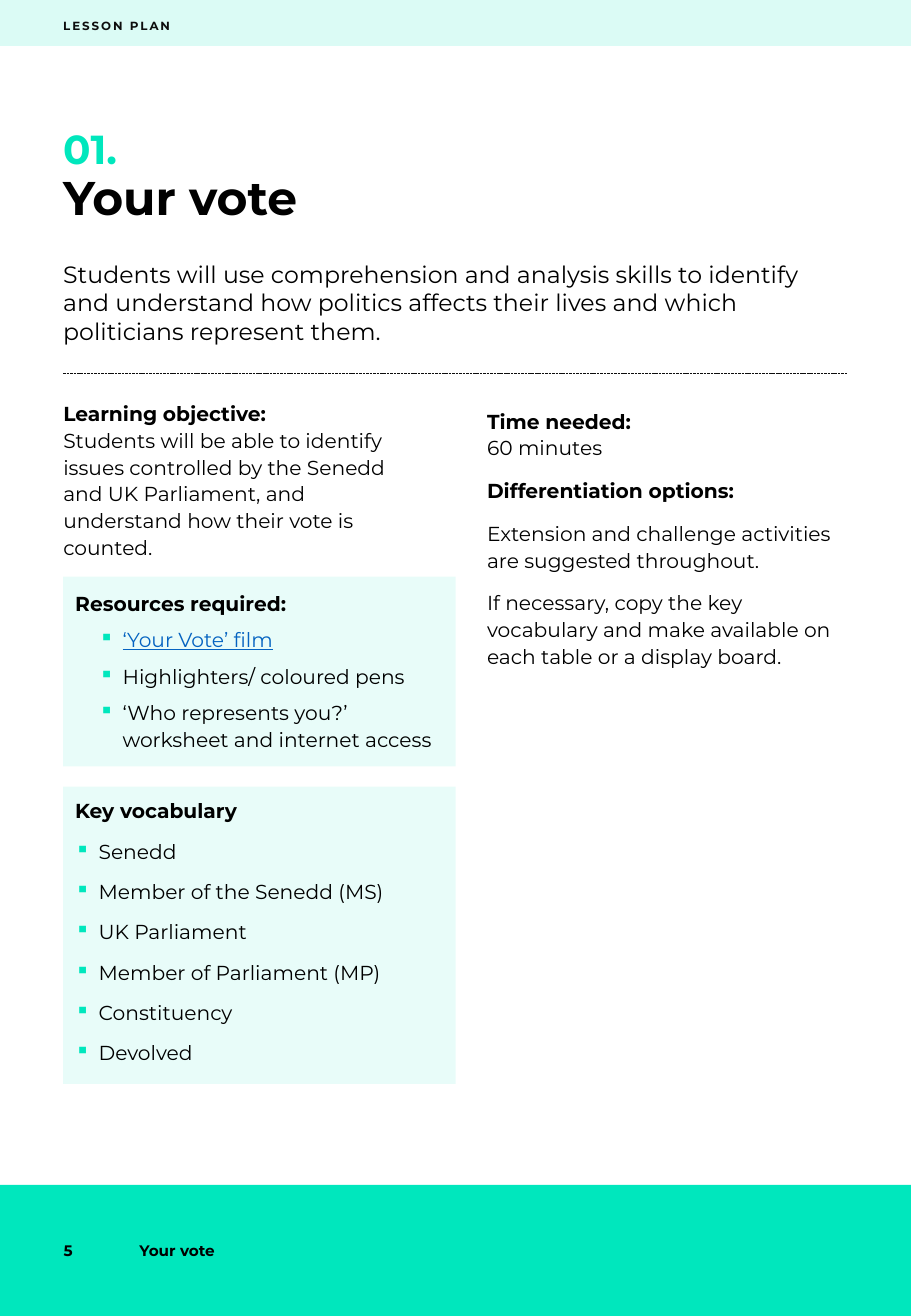
"""Build the lesson plan page for "Your vote"."""
from dataclasses import dataclass
from typing import Optional

from lxml import etree
from pptx import Presentation
from pptx.dml.color import RGBColor
from pptx.enum.dml import MSO_LINE
from pptx.enum.shapes import MSO_CONNECTOR, MSO_SHAPE
from pptx.enum.text import MSO_ANCHOR, PP_ALIGN
from pptx.oxml.ns import qn
from pptx.util import Pt

TOP, MIDDLE = MSO_ANCHOR.TOP, MSO_ANCHOR.MIDDLE
LEFT_ALIGN = PP_ALIGN.LEFT
RECTANGLE = MSO_SHAPE.RECTANGLE
STRAIGHT = MSO_CONNECTOR.STRAIGHT
SHORT_DASH = MSO_LINE.SQUARE_DOT

FONT = "Montserrat"
COLORS = {"mint": "00E7BD", "black": "000000", "ink": "0D0D0D", "link": "0563C1"}
PAGE_WIDTH, PAGE_HEIGHT = 540, 780.48
MARGIN = 37.5
FULL_WIDTH = 465
COLUMN_WIDTH = 212.4
PANEL_WIDTH = 232.6
FOOTER_TOP = 702.7
FOOTER_HEIGHT = PAGE_HEIGHT - FOOTER_TOP
BULLET_HANG = 13.9


@dataclass(frozen=True)
class Para:
    """A paragraph: an optional bold heading line, then text."""
    text: str = ""
    heading: str = ""
    size: float = 12
    color: str = "black"
    line_spacing: float = 1.0
    before: float = 7.5
    bullet_indent: Optional[float] = None
    link: bool = False
    tracking: float = 0


@dataclass(frozen=True)
class Block:
    """A text box, or a tinted panel if opacity is given."""
    left: float
    top: float
    width: float
    height: float
    paras: tuple[Para, ...]
    inset: float = 0
    anchor: MSO_ANCHOR = TOP
    opacity: Optional[int] = None


def bullets(items: tuple[str, ...], indent: float, **style) -> tuple[Para, ...]:
    """Return one bulleted paragraph per item."""
    return tuple(Para(item, bullet_indent=indent, **style) for item in items)


BLOCKS = (
    Block(MARGIN, 5, 194.4, 20.2,
          (Para(heading="LESSON PLAN", size=7, color="ink", tracking=1.2),), anchor=MIDDLE),
    Block(MARGIN, 73.4, FULL_WIDTH, 26.6, (Para(heading="01.", size=24, color="mint"),)),
    Block(MARGIN, 103.7, FULL_WIDTH, 63.4,
          (Para(heading="Your vote", size=28, line_spacing=0.9),)),
    Block(MARGIN, 154.1, FULL_WIDTH, 50.4, (Para(
        "Students will use comprehension and analysis skills to identify and understand how "
        "politics affects their lives and which politicians represent them.", size=14),)),
    Block(MARGIN, 236.9, COLUMN_WIDTH, 103, (Para(
        "Students will be able to identify issues controlled by the Senedd and UK Parliament, "
        "and understand how their vote is counted.", "Learning objective:", line_spacing=1.1),)),
    Block(288.7, 241.2, COLUMN_WIDTH, 442, (
        Para("60 minutes", "Time needed:", line_spacing=1.1),
        Para(heading="Differentiation options:", line_spacing=1.1),
        Para("Extension and challenge activities are suggested throughout.", line_spacing=1.1),
        Para("If necessary, copy the key vocabulary and make available on each table "
             "or a display board.", line_spacing=1.1))),
    Block(MARGIN, 342, PANEL_WIDTH, 112.5, (
        Para(heading="Resources required:", line_spacing=1.1),
        *bullets(("‘Your Vote’ film",), 28.1, line_spacing=1.1, before=3.8, link=True),
        *bullets(("Highlighters/ coloured pens",
                  "‘Who represents you?’ worksheet and internet access"),
                 28.1, line_spacing=1.1, before=3.8)), inset=7.2, opacity=9),
    Block(MARGIN, 466.5, PANEL_WIDTH, 176.4, (
        Para(heading="Key vocabulary"),
        *bullets(("Senedd", "Member of the Senedd (MS)", "UK Parliament",
                  "Member of Parliament (MP)", "Constituency", "Devolved"), BULLET_HANG)),
          inset=7.2, opacity=9),
    Block(30.7, FOOTER_TOP, 44.6, FOOTER_HEIGHT, (Para(heading="5", size=9),),
          inset=7.2, anchor=MIDDLE),
    Block(75.6, FOOTER_TOP, 199.4, FOOTER_HEIGHT, (Para(heading="Your vote", size=9),),
          inset=7.2, anchor=MIDDLE),
)


def rgb(name: str) -> RGBColor:
    """Look up a named colour."""
    return RGBColor.from_string(COLORS[name])


def add_band(page, left: float, top: float, width: float, height: float, opacity: int = 100):
    """Draw a mint rectangle with the given opacity in percent."""
    band = page.shapes.add_shape(RECTANGLE, Pt(left), Pt(top), Pt(width), Pt(height))
    band.shadow.inherit = False
    band.line.fill.background()
    band.fill.solid()
    band.fill.fore_color.rgb = rgb("mint")
    if opacity < 100:
        color = band.fill._xPr.find(".//" + qn("a:srgbClr"))
        etree.SubElement(color, qn("a:alpha"), val=str(opacity * 1000))
    return band


def add_bullet(para, indent: float) -> None:
    """Give a paragraph a hanging mint square bullet."""
    props = para._p.get_or_add_pPr()
    props.set("marL", str(Pt(indent)))
    props.set("indent", str(-Pt(BULLET_HANG)))
    color = etree.SubElement(props, qn("a:buClr"))
    etree.SubElement(color, qn("a:srgbClr"), val=COLORS["mint"])
    etree.SubElement(props, qn("a:buChar"), char="▪")


def write_para(para, content: Para, is_first: bool) -> None:
    """Fill and format one paragraph."""
    if content.bullet_indent is not None:
        add_bullet(para, content.bullet_indent)
    para.alignment = LEFT_ALIGN
    para.line_spacing = content.line_spacing
    para.space_before = Pt(0 if is_first else content.before)
    para.space_after = Pt(2)
    para.font.name = FONT
    para.font.size = Pt(content.size)
    para.font.color.rgb = rgb("link" if content.link else content.color)
    para.font.underline = content.link
    mixed = bool(content.heading and content.text)
    if not mixed:
        para.font.bold = bool(content.heading)
    for text, bold in ((content.heading, True), (content.text, False)):
        if not text:
            continue
        if mixed and not bold:
            para.add_line_break()
        span = para.add_run()
        span.text = text
        if mixed:
            span.font.bold = bold
        if content.tracking:
            span._r.get_or_add_rPr().set("spc", str(round(content.tracking * 100)))


def add_block(page, block: Block) -> None:
    """Draw a text box or panel with its paragraphs."""
    place = (block.left, block.top, block.width, block.height)
    if block.opacity is None:
        box = page.shapes.add_textbox(*map(Pt, place))
    else:
        box = add_band(page, *place, opacity=block.opacity)
    frame = box.text_frame
    frame.word_wrap = True
    frame.vertical_anchor = block.anchor
    frame.margin_left = frame.margin_right = Pt(block.inset)
    frame.margin_top = frame.margin_bottom = Pt(block.inset)
    for index, content in enumerate(block.paras):
        para = frame.add_paragraph() if index else frame.paragraphs[0]
        write_para(para, content, index == 0)


def add_divider(page, top: float) -> None:
    """Draw the dashed rule across the page."""
    rule = page.shapes.add_connector(
        STRAIGHT, Pt(MARGIN), Pt(top), Pt(MARGIN + FULL_WIDTH), Pt(top))
    rule.line.color.rgb = rgb("ink")
    rule.line.width = Pt(0.5)
    rule.line.dash_style = SHORT_DASH
    etree.SubElement(rule._element.spPr, qn("a:effectLst"))


def main() -> None:
    """Build and save the deck."""
    deck = Presentation()
    deck.slide_width, deck.slide_height = Pt(PAGE_WIDTH), Pt(PAGE_HEIGHT)
    page = deck.slides.add_slide(deck.slide_layouts[6])
    add_band(page, 0, 0, PAGE_WIDTH, 27.2, opacity=14)
    add_band(page, 0, FOOTER_TOP, PAGE_WIDTH, FOOTER_HEIGHT)
    add_divider(page, 221.2)
    for block in BLOCKS:
        add_block(page, block)
    deck.save("out.pptx")


if __name__ == "__main__":
    main()
